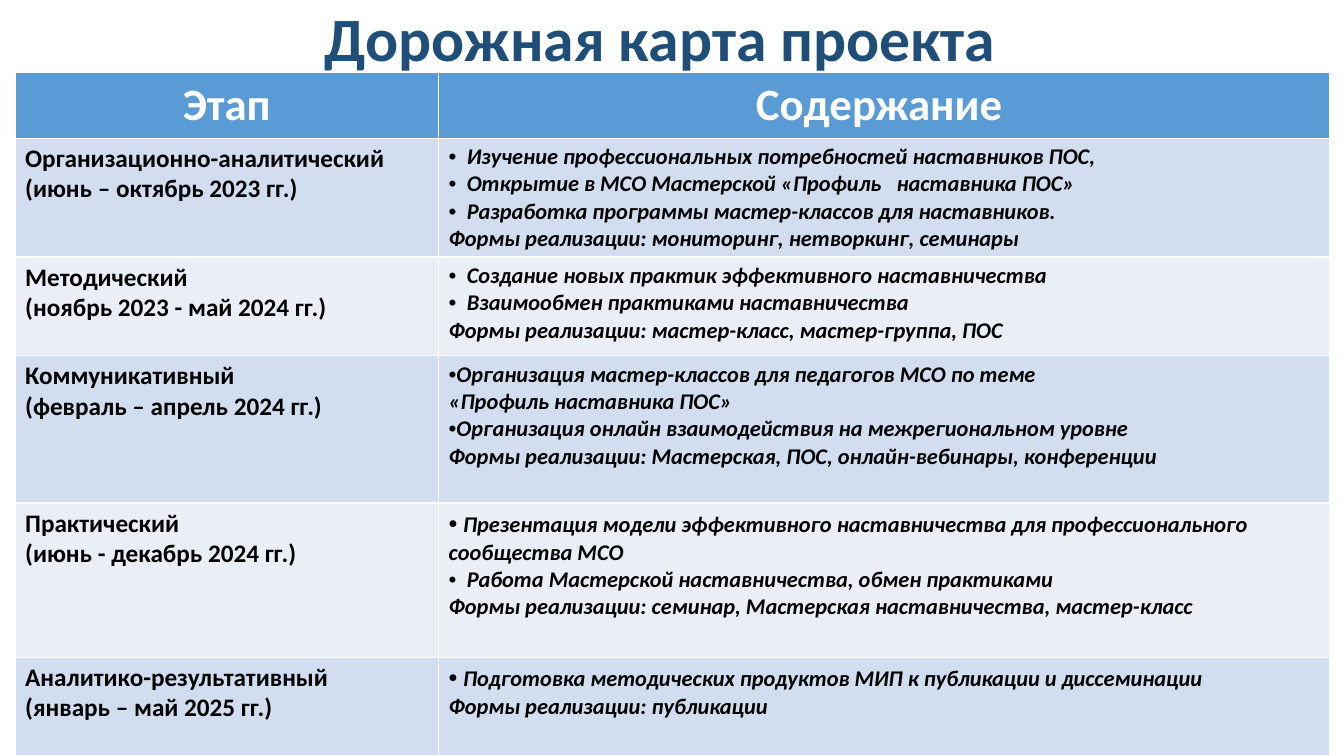
from lxml.etree import SubElement
from pptx import Presentation
from pptx.dml.color import RGBColor
from pptx.enum.text import MSO_ANCHOR, PP_ALIGN
from pptx.oxml.ns import qn
from pptx.util import Inches, Pt

COLORS = {
    "title": "1F4E79",
    "header": "5B9BD5",
    "odd_row": "D2DEEF",
    "even_row": "EAEFF7",
    "white": "FFFFFF",
    "text": "000000",
}
HEADERS = ("Этап", "Содержание ")
COLUMN_WIDTHS = (4.2, 8.84)
HEADER_HEIGHT = 0.65

# Kinds of content line
HANGING, TIGHT, SPACED, PLAIN = "hanging", "tight", "spaced", "plain"

# Row height, stage name, dates, content lines
STAGES = [
    (1.18, "Организационно-аналитический", "(июнь – октябрь 2023 гг.)", [
        (HANGING, "Изучение профессиональных потребностей наставников ПОС,"),
        (HANGING, "Открытие в МСО Мастерской «Профиль   наставника ПОС»"),
        (HANGING, "Разработка программы мастер-классов для наставников."),
        (PLAIN, "Формы реализации: мониторинг, нетворкинг, семинары"),
    ]),
    (0.98, "Методический", "(ноябрь 2023 - май 2024 гг.)", [
        (HANGING, "Создание новых практик эффективного наставничества"),
        (HANGING, "Взаимообмен практиками наставничества"),
        (PLAIN, "Формы реализации: мастер-класс, мастер-группа, ПОС"),
    ]),
    (1.46, "Коммуникативный", "(февраль – апрель 2024 гг.)", [
        (TIGHT, "Организация мастер-классов для педагогов МСО по теме"),
        (PLAIN, "«Профиль наставника ПОС»"),
        (TIGHT, "Организация онлайн взаимодействия на межрегиональном уровне"),
        (PLAIN, "Формы реализации: Мастерская, ПОС, онлайн-вебинары, конференции"),
    ]),
    (1.53, "Практический", "(июнь - декабрь 2024 гг.)", [
        (SPACED, "Презентация модели эффективного наставничества "
                 "для профессионального сообщества МСО"),
        (HANGING, "Работа Мастерской наставничества, обмен практиками"),
        (PLAIN, "Формы реализации: семинар, Мастерская наставничества, мастер-класс"),
    ]),
    (0.98, "Аналитико-результативный", "(январь – май 2025 гг.)", [
        (SPACED, "Подготовка методических продуктов МИП к публикации и диссеминации"),
        (PLAIN, "Формы реализации: публикации"),
    ]),
]


class RoadmapSlide:
    font_name = "Calibri"
    bullet_indent = Inches(0.18)

    def __init__(self, presentation):
        self.slide = presentation.slides.add_slide(presentation.slide_layouts[6])

    def style_run(self, run, size, color, bold=True, italic=False):
        font = run.font
        font.name = self.font_name
        font.size = Pt(size)
        font.bold = bold
        font.italic = italic
        font.color.rgb = RGBColor.from_string(COLORS[color])

    def add_title(self, text, left, top, width, height):
        box = self.slide.shapes.add_textbox(
            Inches(left), Inches(top), Inches(width), Inches(height))
        frame = box.text_frame
        frame.word_wrap = True
        frame.vertical_anchor = MSO_ANCHOR.MIDDLE
        frame.text = text
        paragraph = frame.paragraphs[0]
        paragraph.alignment = PP_ALIGN.CENTER
        paragraph.line_spacing = 0.9
        self.style_run(paragraph.runs[0], 44, "title")

    def add_table(self, left, top, widths, heights):
        table = self.slide.shapes.add_table(
            len(heights), len(widths), Inches(left), Inches(top),
            Inches(sum(widths)), Inches(sum(heights))).table
        for column, width in zip(table.columns, widths):
            column.width = Inches(width)
        for row, height in zip(table.rows, heights):
            row.height = Inches(height)
        return table

    def fill_cell(self, cell, lines, fill, size, color="text", italic=False):
        cell.fill.solid()
        cell.fill.fore_color.rgb = RGBColor.from_string(COLORS[fill])
        frame = cell.text_frame
        frame.text = "\n".join(lines)
        for paragraph in frame.paragraphs:
            self.style_run(paragraph.runs[0], size, color, italic=italic)
        return frame.paragraphs

    def add_bullet(self, paragraph, kind):
        properties = paragraph._p.get_or_add_pPr()
        indent = self.bullet_indent if kind == HANGING else 0
        properties.set("marL", str(indent))
        properties.set("indent", str(-indent))
        SubElement(properties, qn("a:buFont"), typeface="Arial")
        SubElement(properties, qn("a:buChar"), char="•")
        if kind == SPACED:
            text_run = paragraph.runs[0]
            space = paragraph.add_run()
            space.text = " "
            self.style_run(space, 18, "text", bold=False)
            text_run._r.addprevious(space._r)

    def add_roadmap(self, left, top):
        heights = [HEADER_HEIGHT] + [stage[0] for stage in STAGES]
        table = self.add_table(left, top, COLUMN_WIDTHS, heights)
        for column, header in enumerate(HEADERS):
            paragraphs = self.fill_cell(
                table.cell(0, column), [header], "header", 32, "white")
            paragraphs[0].alignment = PP_ALIGN.CENTER
        for row, (_, name, dates, content) in enumerate(STAGES, start=1):
            fill = "odd_row" if row % 2 else "even_row"
            self.fill_cell(table.cell(row, 0), [name, dates], fill, 18)
            paragraphs = self.fill_cell(
                table.cell(row, 1), [text for _, text in content], fill, 16, italic=True)
            for paragraph, (kind, _) in zip(paragraphs, content):
                if kind != PLAIN:
                    self.add_bullet(paragraph, kind)


def main():
    presentation = Presentation()
    presentation.slide_width = Inches(13.33)
    presentation.slide_height = Inches(7.5)
    roadmap = RoadmapSlide(presentation)
    roadmap.add_title("Дорожная карта проекта ", 0.87, -0.31, 11.5, 1.45)
    roadmap.add_roadmap(0.15, 0.72)
    presentation.save("out.pptx")


if __name__ == "__main__":
    main()
